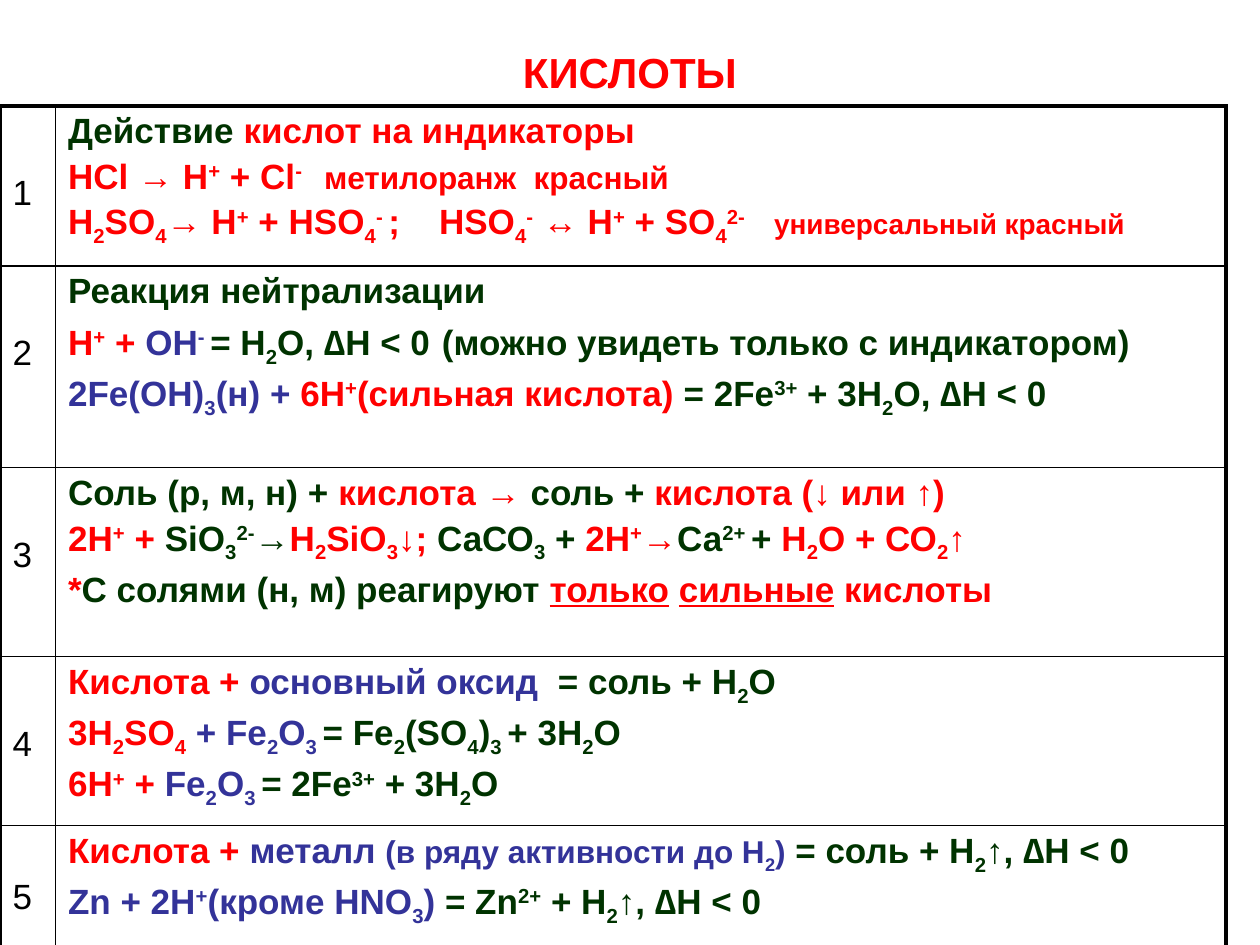
from typing import NamedTuple

from lxml.etree import SubElement
from pptx import Presentation
from pptx.dml.color import RGBColor
from pptx.enum.text import MSO_ANCHOR, PP_ALIGN
from pptx.oxml.ns import qn
from pptx.util import Pt

RED, GREEN, BLUE, BLACK = "FF0000", "003300", "333399", "000000"
FONT = "Arial"
BASELINES = {"_": "-25000", "^": "30000"}
THICK, THIN = 2.25, 1
LINE_GAP = 3.6
COLUMNS = (31.7, 668.9)


class Span(NamedTuple):
    text: str
    color: str
    size: float = 20
    bold: bool = True
    underline: bool = False


class Line(NamedTuple):
    spans: list[Span]
    tabs: tuple[float, ...] = ()


class Reaction(NamedTuple):
    height: float
    number_top: float
    lines: list[Line]


REACTIONS = [
    Reaction(91.4, 39, [
        Line([Span("Действие ", GREEN), Span("кислот на индикаторы", RED)]),
        Line([Span("HCl → H|^+| + Cl|^-|\t", RED),
              Span("метилоранж  красный", RED, 18)], (146.3,)),
        Line([Span("H|_2|SO|_4|→ H|^+| + HSO|_4|^- |;\tHSO|_4|^-| ↔ H|^+| + SO|_4|^2-|\t", RED),
              Span("универсальный красный", RED, 16)], (212, 403.4)),
    ]),
    Reaction(115.4, 39, [
        Line([Span("Реакция нейтрализации", GREEN)]),
        Line([Span("Н|^+| + ", RED), Span("ОН|^- ", BLUE), Span("= Н|_2|О, ∆Н < 0", GREEN),
              Span(" ", GREEN, 24), Span("(можно увидеть только с индикатором)", GREEN)]),
        Line([Span("2Fe(OH)|_3|(н) + ", BLUE), Span("6H|^+|(сильная кислота) ", RED),
              Span("= 2Fe|^3+| + 3H|_2|O, ∆Н < 0", GREEN)]),
    ]),
    Reaction(108, 39, [
        Line([Span("Соль (р, м, н) +", GREEN), Span(" кислота → ", RED),
              Span("соль +", GREEN), Span(" кислота (↓ или ↑)", RED)]),
        Line([Span("2H|^+| + ", RED), Span("SiO|_3|^2-|→", GREEN), Span("H|_2|SiO|_3|↓; ", RED),
              Span("СаСО|_3| + ", GREEN), Span("2Н|^+|→", RED), Span("Са|^2+ |+ ", GREEN),
              Span("Н|_2|О + СО|_2|↑", RED)]),
        Line([Span("*", RED), Span("С солями (н, м) реагируют ", GREEN),
              Span("только", RED, underline=True), Span(" ", RED),
              Span("сильные", RED, underline=True), Span(" кислоты", RED)]),
    ]),
    Reaction(91.4, 39, [
        Line([Span("Кислота + ", RED), Span("основный оксид  ", BLUE),
              Span("= соль + H|_2|O", GREEN)]),
        Line([Span("3Н|_2|SО|_4", RED), Span(" + Fe|_2|O|_3 ", BLUE),
              Span("= Fe|_2|(SO|_4|)|_3 |+ 3Н|_2|О", GREEN)]),
        Line([Span("6H|^+| + ", RED), Span("Fe|_2|O|_3 ", BLUE),
              Span("= 2Fe|^3+| + 3H|_2|O", GREEN)]),
    ]),
    Reaction(104, 30, [
        Line([Span("Кислота + ", RED), Span("металл ", BLUE),
              Span("(в ряду активности до Н|_2|)", BLUE, 18),
              Span(" = соль + Н|_2|↑, ∆Н < 0", GREEN)]),
        Line([Span("Zn + 2H|^+|(кроме HNO|_3|) ", BLUE),
              Span("= Zn|^2+| + Н|_2|↑, ∆Н < 0", GREEN)]),
    ]),
]


def rgb(color: str) -> RGBColor:
    return RGBColor.from_string(color)


def add_span(p, span: Span) -> None:
    for piece in filter(None, span.text.split("|")):
        baseline = BASELINES.get(piece[0])
        r = p.add_run()
        r.text = piece[1:] if baseline else piece
        r.font.name = FONT
        r.font.size = Pt(span.size)
        r.font.bold = span.bold
        r.font.underline = span.underline
        r.font.color.rgb = rgb(span.color)
        if baseline:
            r._r.get_or_add_rPr().set("baseline", baseline)


def add_tabs(p, tabs: tuple[float, ...]) -> None:
    tab_list = SubElement(p._p.get_or_add_pPr(), qn("a:tabLst"))
    for position in tabs:
        SubElement(tab_list, qn("a:tab"), pos=str(Pt(position)), algn="l")


def write_lines(tf, lines: list[Line]) -> None:
    for i, line in enumerate(lines):
        p = tf.add_paragraph() if i else tf.paragraphs[0]
        if i:
            p.space_before = Pt(LINE_GAP)
        if line.tabs:
            add_tabs(p, line.tabs)
        for span in line.spans:
            add_span(p, span)


def set_borders(cell, left: float, right: float, top: float, bottom: float) -> None:
    props = cell._tc.get_or_add_tcPr()
    for side, width in zip("LRTB", (left, right, top, bottom)):
        ln = SubElement(props, qn(f"a:ln{side}"), w=str(Pt(width)))
        fill = SubElement(ln, qn("a:solidFill"))
        SubElement(fill, qn("a:srgbClr"), val=BLACK)


def add_title(s, span: Span) -> None:
    sp = s.shapes.add_textbox(Pt(36), Pt(21.6), Pt(648), Pt(38.9))
    tf = sp.text_frame
    tf.word_wrap = True
    tf.vertical_anchor = MSO_ANCHOR.MIDDLE
    tf.paragraphs[0].alignment = PP_ALIGN.CENTER
    add_span(tf.paragraphs[0], span)


def add_reactions(s, reactions: list[Reaction]) -> None:
    height = sum(reaction.height for reaction in reactions)
    table = s.shapes.add_table(len(reactions), len(COLUMNS), Pt(0), Pt(60.5),
                               Pt(sum(COLUMNS)), Pt(height)).table
    table.first_row = table.horz_banding = False
    for column, width in zip(table.columns, COLUMNS):
        column.width = Pt(width)
    for i, reaction in enumerate(reactions):
        table.rows[i].height = Pt(reaction.height)
        top = THIN if i else THICK
        bottom = THIN if i < len(reactions) - 1 else THICK
        number, body = table.cell(i, 0), table.cell(i, 1)
        set_borders(number, THICK, THIN, top, bottom)
        set_borders(body, THIN, THICK, top, bottom)
        for cell in (number, body):
            cell.fill.background()
        number.margin_top = Pt(reaction.number_top)
        write_lines(number.text_frame, [Line([Span(str(i + 1), BLACK, bold=False)])])
        write_lines(body.text_frame, reaction.lines)


def main() -> None:
    prs = Presentation()
    prs.slide_width, prs.slide_height = Pt(720), Pt(540)
    s = prs.slides.add_slide(prs.slide_layouts[6])
    add_title(s, Span("КИСЛОТЫ", RED, 24))
    add_reactions(s, REACTIONS)
    prs.save("out.pptx")


if __name__ == "__main__":
    main()
